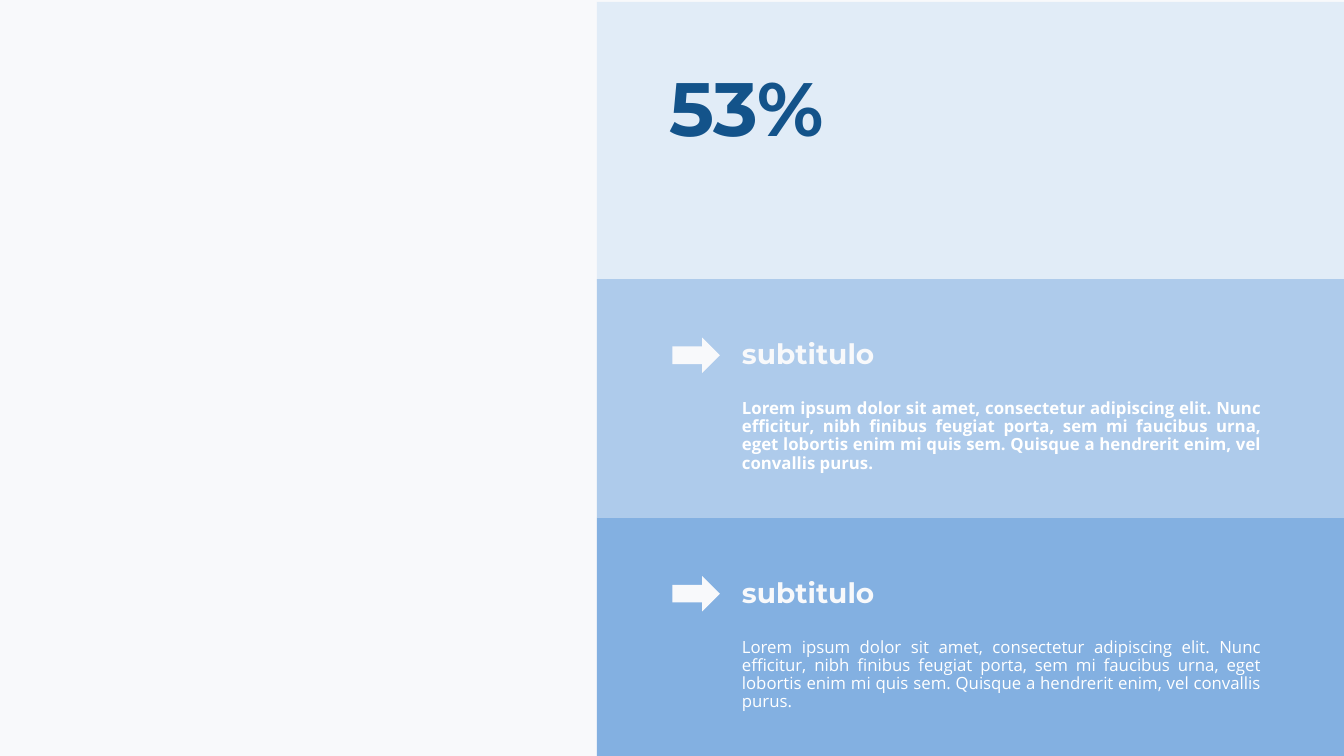
import pptx
import pptx.dml.color
import pptx.enum.shapes
import pptx.enum.text
import pptx.util
from dataclasses import dataclass

Inches = pptx.util.Inches
Shapes = pptx.enum.shapes.MSO_SHAPE
Align = pptx.enum.text.PP_ALIGN


@dataclass(frozen=True)
class Theme:
    background: str = "F8F9FB"
    figure_band: str = "E1ECF7"
    upper_band: str = "AECBEB"
    lower_band: str = "83B0E1"
    figure: str = "13538A"
    body: str = "FFFFFF"
    heading_font: str = "Montserrat"
    body_font: str = "Open Sans"
    figure_size: int = 54
    subtitle_size: int = 20
    body_size: int = 12


theme = Theme()
presentation = pptx.Presentation()
presentation.slide_width = Inches(13.33)
presentation.slide_height = Inches(7.5)
slide = presentation.slides.add_slide(presentation.slide_layouts[6])
slide.background.fill.solid()
slide.background.fill.fore_color.rgb = pptx.dml.color.RGBColor.from_string(theme.background)


def add_block(kind, left, top, width, height, color):
    shape = slide.shapes.add_shape(kind, Inches(left), Inches(top), Inches(width), Inches(height))
    shape.shadow.inherit = False
    shape.fill.solid()
    shape.fill.fore_color.rgb = pptx.dml.color.RGBColor.from_string(color)
    shape.line.fill.background()


def add_text(text, left, top, width, height, font, size, color, bold=True, align=Align.LEFT):
    shape = slide.shapes.add_textbox(Inches(left), Inches(top), Inches(width), Inches(height))
    shape.text_frame.word_wrap = True
    paragraph = shape.text_frame.paragraphs[0]
    paragraph.text = text
    paragraph.alignment = align
    paragraph.line_spacing = 0.9
    paragraph.space_before = pptx.util.Pt(10)
    paragraph.font.name = font
    paragraph.font.size = pptx.util.Pt(size)
    paragraph.font.bold = bold
    paragraph.font.color.rgb = pptx.dml.color.RGBColor.from_string(color)


panel_left, panel_width = 5.92, 7.41
arrow_left, text_left = 6.67, 7.26
section_top, section_height = 2.77, 2.365
lorem = (
    "Lorem ipsum dolor sit amet, consectetur adipiscing elit. Nunc efficitur, "
    "nibh finibus feugiat porta, sem mi faucibus urna, eget lobortis enim mi quis sem. "
    "Quisque a hendrerit enim, vel convallis purus."
)
sections = [
    (theme.upper_band, "subtitulo", lorem, True),
    (theme.lower_band, "subtitulo", lorem, False),
]

add_block(Shapes.RECTANGLE, panel_left, 0.02, panel_width, section_top, theme.figure_band)
add_text("53%", 6.54, 0.66, 2.67, 0.88, theme.heading_font, theme.figure_size, theme.figure)

for row, (band_color, subtitle, body, bold) in enumerate(sections):
    top = section_top + row * section_height
    add_block(Shapes.RECTANGLE, panel_left, top, panel_width, section_height, band_color)
    add_block(Shapes.RIGHT_ARROW, arrow_left, top + 0.58, 0.47, 0.35, theme.background)
    add_text(subtitle, text_left, top + 0.56, 3.89, 0.35,
             theme.heading_font, theme.subtitle_size, theme.background)
    add_text(body, text_left, top + 1.15, 5.35, 0.75,
             theme.body_font, theme.body_size, theme.body, bold, Align.JUSTIFY)

presentation.save("out.pptx")
